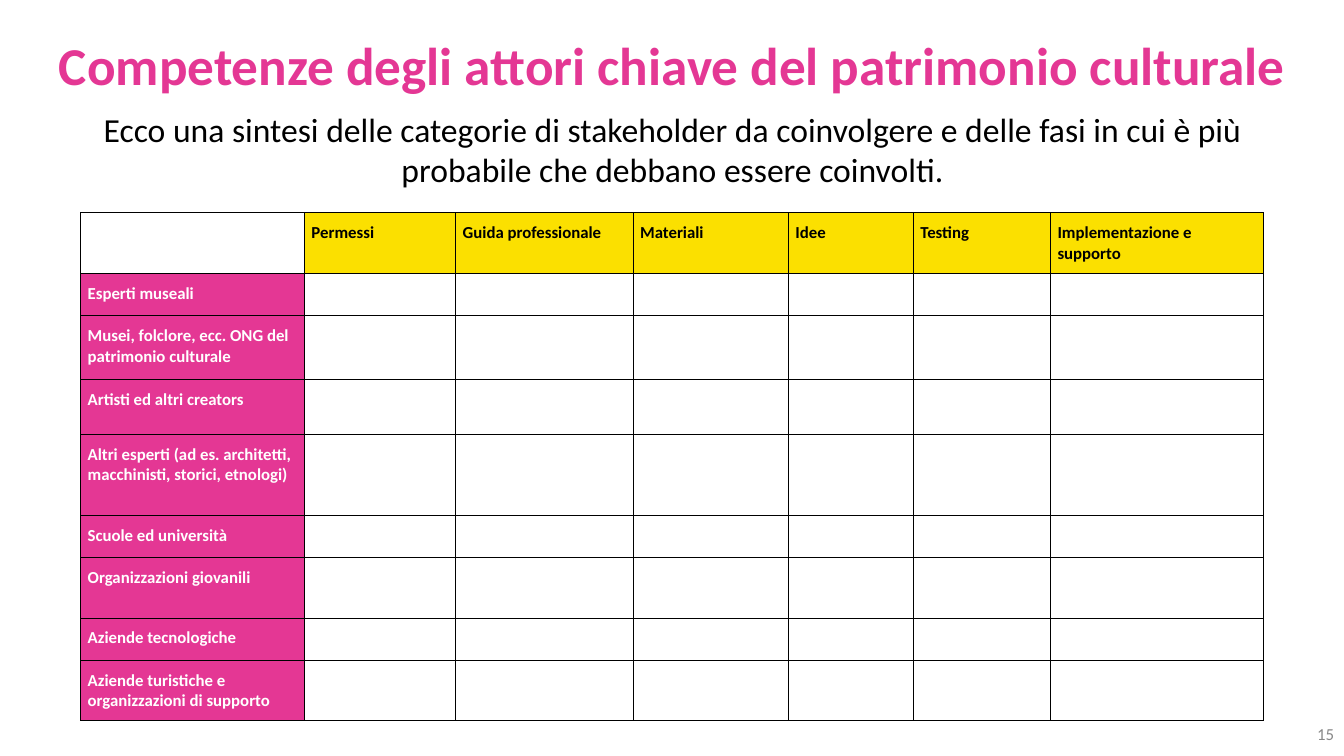
from lxml.etree import SubElement
from pptx import Presentation
from pptx.dml.color import RGBColor
from pptx.enum.text import MSO_ANCHOR, PP_ALIGN
from pptx.oxml.ns import qn
from pptx.util import Emu, Pt

PINK, YELLOW, BLACK, WHITE, GREY = "E43794", "FBE000", "000000", "FFFFFF", "888888"
PHASES = ["Permessi", "Guida professionale", "Materiali", "Idee", "Testing",
          "Implementazione e supporto"]
STAKEHOLDERS = [
    "Esperti museali",
    "Musei, folclore, ecc. ONG del patrimonio culturale",
    "Artisti ed altri creators",
    "Altri esperti (ad es. architetti, macchinisti, storici, etnologi)",
    "Scuole ed università",
    "Organizzazioni giovanili",
    "Aziende tecnologiche",
    "Aziende turistiche e organizzazioni di supporto",
]
COLUMN_WIDTHS = [222, 150, 176, 154, 124, 136, 211]
ROW_HEIGHTS = [60, 42, 63, 55, 80, 42, 60, 42, 60]


def px(length):
    """Convert pixels, 100 to the inch, into EMU."""
    return Emu(length * 9144)


def rgb(color):
    return RGBColor.from_string(color)


def write_text(frame, text, size=12, color=BLACK, bold=False,
               align=PP_ALIGN.LEFT, line_spacing=None):
    paragraph = frame.paragraphs[0]
    paragraph.alignment = align
    paragraph.line_spacing = line_spacing
    run = paragraph.add_run()
    run.text = text
    run.font.name = "Calibri"
    run.font.size = Pt(size)
    run.font.bold = bold
    run.font.color.rgb = rgb(color)


def add_text(slide, left, top, width, height, text, anchor=MSO_ANCHOR.TOP, **text_format):
    frame = slide.shapes.add_textbox(px(left), px(top), px(width), px(height)).text_frame
    frame.word_wrap = True
    frame.vertical_anchor = anchor
    write_text(frame, text, **text_format)


def add_borders(cell):
    properties = cell._tc.get_or_add_tcPr()
    for position, side in enumerate(("a:lnL", "a:lnR", "a:lnT", "a:lnB")):
        line = properties.makeelement(qn(side), {"w": str(Pt(0.5))})
        fill = SubElement(line, qn("a:solidFill"))
        SubElement(fill, qn("a:srgbClr"), val=BLACK)
        properties.insert(position, line)


def fill_label(cell, text, fill, color):
    cell.fill.solid()
    cell.fill.fore_color.rgb = rgb(fill)
    cell.margin_left = cell.margin_right = px(7)
    cell.margin_top = cell.margin_bottom = px(10)
    write_text(cell.text_frame, text, color=color, bold=True)


def add_stakeholder_table(slide, left, top):
    table = slide.shapes.add_table(
        len(ROW_HEIGHTS), len(COLUMN_WIDTHS), px(left), px(top),
        px(sum(COLUMN_WIDTHS)), px(sum(ROW_HEIGHTS))).table
    table.first_row = table.horz_banding = False
    for column, width in zip(table.columns, COLUMN_WIDTHS):
        column.width = px(width)
    for row, height in zip(table.rows, ROW_HEIGHTS):
        row.height = px(height)
    for cell in table.iter_cells():
        cell.fill.background()
        add_borders(cell)
    for index, phase in enumerate(PHASES, start=1):
        fill_label(table.cell(0, index), phase, YELLOW, BLACK)
    for index, stakeholder in enumerate(STAKEHOLDERS, start=1):
        fill_label(table.cell(index, 0), stakeholder, PINK, WHITE)


def main():
    presentation = Presentation()
    presentation.slide_width, presentation.slide_height = px(1333), px(750)
    slide = presentation.slides.add_slide(presentation.slide_layouts[6])
    add_text(slide, 33, 34, 1268, 69,
             "Competenze degli attori chiave del patrimonio culturale",
             size=38, color=PINK, bold=True, align=PP_ALIGN.CENTER, line_spacing=0.9)
    add_text(slide, 67, 103, 1200, 88,
             "Ecco una sintesi delle categorie di stakeholder da coinvolgere e delle "
             "fasi in cui è più probabile che debbano essere coinvolti.",
             size=24, align=PP_ALIGN.CENTER)
    add_stakeholder_table(slide, 80, 211)
    add_text(slide, 863, 715, 470, 25, "15", anchor=MSO_ANCHOR.MIDDLE,
             color=GREY, align=PP_ALIGN.RIGHT)
    presentation.save("out.pptx")


if __name__ == "__main__":
    main()
